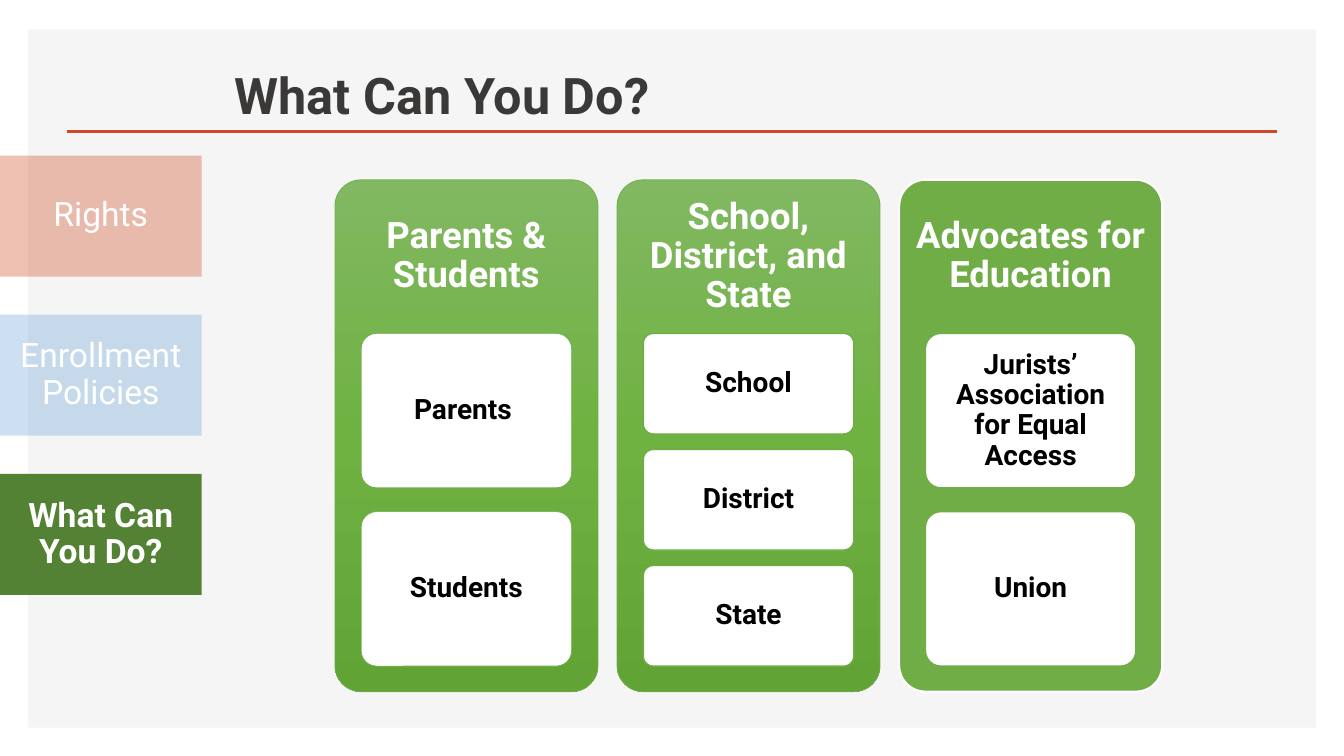
from copy import deepcopy
from dataclasses import dataclass

from lxml.etree import SubElement
from pptx import Presentation
from pptx.dml.color import RGBColor
from pptx.enum.shapes import MSO_CONNECTOR, MSO_SHAPE
from pptx.enum.text import MSO_ANCHOR, MSO_AUTO_SIZE, PP_ALIGN
from pptx.oxml.ns import qn
from pptx.util import Cm, Pt


@dataclass(frozen=True)
class Theme:
    font: str = "Roboto"
    panel: str = "F5F5F5"
    rule: str = "D24726"
    title: str = "3B3838"
    green: str = "70AD47"
    white: str = "FFFFFF"
    black: str = "000000"
    shades: tuple = ("81B861", "6FB242", "62A336")
    title_size: int = 36
    head_size: int = 26
    tab_size: int = 24
    card_size: int = 20


THEME = Theme()
TITLE = "What Can You Do?"
# label, fill, opacity in percent, bold
TABS = [
    ("Rights", "CC3300", 30, False),
    ("Enrollment Policies", "5B9BD5", 30, False),
    ("What Can You Do?", "548235", 100, True),
]
# heading, cards, shaded, border colour, border width, card border width
COLUMNS = [
    ("Parents & Students", ["Parents ", "Students"], True, THEME.green, 0.5, 0.5),
    ("School, District, and State", ["School", "District", "State"],
     True, THEME.green, 0.5, 1),
    ("Advocates for Education", ["Jurists’ Association for Equal Access", "Union"],
     False, THEME.white, 1.5, 1),
]

TAB_TOP, TAB_WIDE, TAB_HIGH, TAB_STEP = 3.92, 5.08, 3.05, 4.01
COL_LEFT, COL_TOP, COL_WIDE, COL_HIGH, COL_STEP = 8.44, 4.53, 6.63, 12.9, 7.11
HEAD_PART, CARD_PART, SIDE_PART = 0.3, 0.65, 0.1
GAP_RATIO = 2 / 13  # gap between cards, as a share of card height
ROUND = 0.1


def rgb(code):
    return RGBColor.from_string(code)


def write(shape, text, size, color, bold=True, align=PP_ALIGN.CENTER,
          anchor=MSO_ANCHOR.MIDDLE, insets=(0.25, 0.25, 0.25, 0.25)):
    """Fill the shape with one run; insets are left, top, right, bottom in cm."""
    frame = shape.text_frame
    frame.word_wrap = True
    frame.auto_size = MSO_AUTO_SIZE.NONE
    frame.vertical_anchor = anchor
    (frame.margin_left, frame.margin_top,
     frame.margin_right, frame.margin_bottom) = map(Cm, insets)
    para = frame.paragraphs[0]
    para.alignment = align
    para.line_spacing = 0.9
    run = para.add_run()
    run.text = text
    run.font.name = THEME.font
    run.font.size = Pt(size)
    run.font.bold = bold
    run.font.color.rgb = rgb(color)


def add_box(slide, kind, left, top, wide, high, fill, edge=None, width=1):
    box = slide.shapes.add_shape(kind, Cm(left), Cm(top), Cm(wide), Cm(high))
    box.shadow.inherit = False
    box.fill.solid()
    box.fill.fore_color.rgb = rgb(fill)
    if kind == MSO_SHAPE.ROUNDED_RECTANGLE:
        box.adjustments[0] = ROUND
    if edge:
        box.line.color.rgb = rgb(edge)
        box.line.width = Pt(width)
    else:
        box.line.fill.background()
    return box


def shade(box):
    """Give the box the three-stop gradient, top to bottom."""
    box.fill.gradient()
    box.fill.gradient_angle = 270
    stops = box._element.spPr.find(".//" + qn("a:gsLst"))
    stops.insert(1, deepcopy(stops[0]))
    for i, (stop, color) in enumerate(zip(box.fill.gradient_stops, THEME.shades)):
        stop.position = i / 2
        stop.color.rgb = rgb(color)


def add_frame(slide):
    """Place the panel behind the title, then the rule under it."""
    panel = add_box(slide, MSO_SHAPE.RECTANGLE, 0.71, 0.74, 32.46, 17.6, THEME.panel)
    slide.shapes._spTree.insert(2, panel._element)
    rule = slide.shapes.add_connector(
        MSO_CONNECTOR.STRAIGHT, Cm(1.68), Cm(3.32), Cm(32.18), Cm(3.32))
    rule.line.color.rgb = rgb(THEME.rule)
    rule.line.width = Pt(2)
    SubElement(rule._element.spPr, qn("a:effectLst"))
    title = slide.shapes.title
    title.left, title.top, title.width, title.height = map(Cm, (5.66, 1.32, 27.69, 1.96))
    write(title, TITLE, THEME.title_size, THEME.title,
          align=PP_ALIGN.LEFT, anchor=MSO_ANCHOR.BOTTOM, insets=(0.25, 0.13, 0.25, 0.13))


def add_tab(slide, i, label, fill, opacity, bold):
    tab = add_box(slide, MSO_SHAPE.RECTANGLE, 0, TAB_TOP + i * TAB_STEP,
                  TAB_WIDE, TAB_HIGH, fill)
    if opacity < 100:
        color = tab._element.spPr.find(qn("a:solidFill"))[0]
        SubElement(color, qn("a:alpha"), val=str(opacity * 1000))
    write(tab, label, THEME.tab_size, THEME.white, bold)


def add_column(slide, i, head, cards, shaded, edge, width, card_width):
    left = COL_LEFT + i * COL_STEP
    kind = MSO_SHAPE.ROUNDED_RECTANGLE
    column = add_box(slide, kind, left, COL_TOP, COL_WIDE, COL_HIGH,
                     THEME.green, edge, width)
    if shaded:
        shade(column)
    below = COL_HIGH * (1 - HEAD_PART)
    write(column, head, THEME.head_size, THEME.white,
          insets=(0.09, 0.09, 0.09, below + 0.09))
    count = len(cards)
    high = COL_HIGH * CARD_PART / (count + (count - 1) * GAP_RATIO)
    for j, label in enumerate(cards):
        top = COL_TOP + COL_HIGH * HEAD_PART + j * high * (1 + GAP_RATIO)
        card = add_box(slide, kind, left + COL_WIDE * SIDE_PART, top,
                       COL_WIDE * (1 - 2 * SIDE_PART), high,
                       THEME.white, THEME.green, card_width)
        write(card, label, THEME.card_size, THEME.black, insets=(0.15, 0.1, 0.15, 0.1))


def main():
    deck = Presentation()
    deck.slide_width, deck.slide_height = Cm(33.87), Cm(19.05)
    slide = deck.slides.add_slide(deck.slide_layouts[5])
    add_frame(slide)
    for i, column in enumerate(COLUMNS):
        add_column(slide, i, *column)
    for i, tab in enumerate(TABS):
        add_tab(slide, i, *tab)
    deck.save("out.pptx")


if __name__ == "__main__":
    main()
